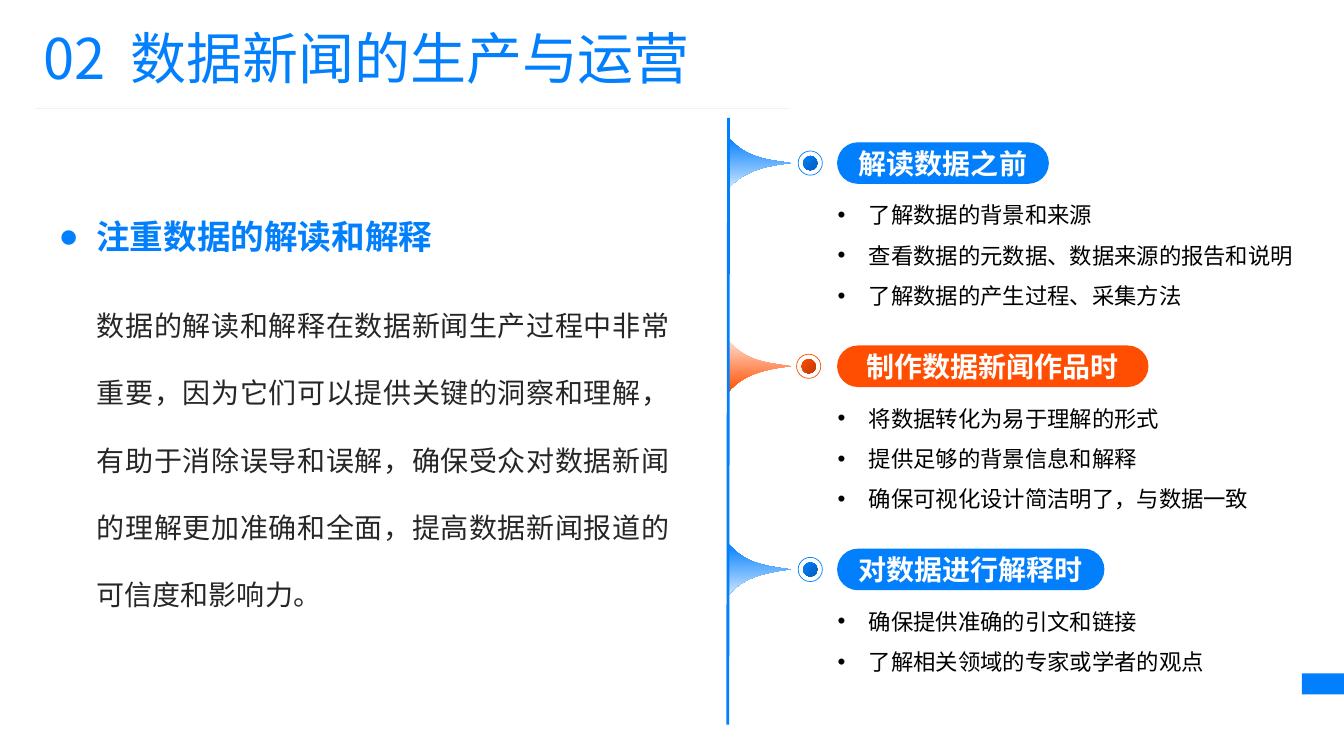
from dataclasses import dataclass

from lxml.etree import SubElement
from pptx import Presentation
from pptx.dml.color import RGBColor
from pptx.enum.shapes import MSO_CONNECTOR, MSO_SHAPE
from pptx.enum.text import MSO_ANCHOR, MSO_AUTO_SIZE, PP_ALIGN
from pptx.oxml.ns import qn
from pptx.util import Cm, Pt

FONT = "Noto Sans CJK SC"
BLUE = RGBColor(0x02, 0x7F, 0xFD)
DARK_BLUE = RGBColor(0x01, 0x5F, 0xBE)
PALE_BLUE = RGBColor(0xCC, 0xE5, 0xFF)
ORANGE = RGBColor(0xFF, 0x4E, 0x01)
DARK_ORANGE = RGBColor(0xC0, 0x3A, 0x00)
PALE_ORANGE = RGBColor(0xFF, 0xDC, 0xCC)
WHITE = RGBColor(0xFF, 0xFF, 0xFF)
BLACK = RGBColor(0, 0, 0)
INK = RGBColor(0x26, 0x26, 0x26)
RULE = RGBColor(0xF2, 0xF2, 0xF2)

AXIS_X = 18.36
LIST_X = 21.11
FIRST_Y = 4.11
PITCH = 5.12
UPPER_CURVE = [(0, -0.65), (0.43, -0.15), (0.86, -0.1), (1.57, 0)]
LOWER_CURVE = [(1.57, 0), (0.84, 0.08), (0.36, 0.23), (0, 0.64)]
STEPS = 16


@dataclass
class Section:
    title: str
    pill_width: float
    list_width: float
    dot_x: float
    color: RGBColor
    dark: RGBColor
    spike: tuple[RGBColor, RGBColor]
    points: list[str]


SECTIONS = [
    Section("解读数据之前", 5.31, 11.68, 20.42, BLUE, DARK_BLUE, (BLUE, PALE_BLUE),
            ["了解数据的背景和来源", "查看数据的元数据、数据来源的报告和说明",
             "了解数据的产生过程、采集方法"]),
    Section("制作数据新闻作品时", 7.82, 11.02, 20.38, ORANGE, DARK_ORANGE, (PALE_ORANGE, ORANGE),
            ["将数据转化为易于理解的形式", "提供足够的背景信息和解释",
             "确保可视化设计简洁明了，与数据一致"]),
    Section("对数据进行解释时", 6.71, 11.02, 20.42, BLUE, DARK_BLUE, (BLUE, PALE_BLUE),
            ["确保提供准确的引文和链接", "了解相关领域的专家或学者的观点"]),
]


def write_text(tf, paragraphs, *, size, color, bold=False, align=PP_ALIGN.LEFT,
               anchor=MSO_ANCHOR.TOP, spacing=1.0, bullet=None, indent=0.0, inset=(0, 0)):
    tf.word_wrap = True
    tf.auto_size = MSO_AUTO_SIZE.NONE
    tf.vertical_anchor = anchor
    tf.margin_left = tf.margin_right = Cm(inset[0])
    tf.margin_top = tf.margin_bottom = Cm(inset[1])
    for i, runs in enumerate(paragraphs):
        p = tf.add_paragraph() if i else tf.paragraphs[0]
        p.alignment = align
        p.line_spacing = spacing
        if bullet:
            pPr = p._p.get_or_add_pPr()
            pPr.set("marL", str(Cm(indent)))
            pPr.set("indent", str(-Cm(indent)))
            SubElement(pPr, qn("a:buFont")).set("typeface", "Arial")
            SubElement(pPr, qn("a:buChar")).set("char", bullet)
        for text in [runs] if isinstance(runs, str) else runs:
            r = p.add_run()
            r.text = text
            r.font.size = Pt(size)
            r.font.bold = bold
            r.font.color.rgb = color
            r.font.name = FONT
            SubElement(r._r.get_or_add_rPr(), qn("a:ea")).set("typeface", FONT)


def add_text(s, x: float, y: float, w: float, h: float, paragraphs, **style):
    tb = s.shapes.add_textbox(Cm(x), Cm(y), Cm(w), Cm(h))
    write_text(tb.text_frame, paragraphs, **style)


def add_line(s, x1: float, y1: float, x2: float, y2: float, color: RGBColor, width: float):
    line = s.shapes.add_connector(MSO_CONNECTOR.STRAIGHT, Cm(x1), Cm(y1), Cm(x2), Cm(y2))
    line.line.color.rgb = color
    line.line.width = Pt(width)
    SubElement(line._element.spPr, qn("a:effectLst"))


def paint(sp, fill=None, line=None, width: float = 0.5, angle: float = 270):
    sp.shadow.inherit = False
    if fill is None:
        sp.fill.background()
    elif isinstance(fill, RGBColor):
        sp.fill.solid()
        sp.fill.fore_color.rgb = fill
    else:
        sp.fill.gradient()
        sp.fill.gradient_angle = angle
        for stop, color in zip(sp.fill.gradient_stops, fill):
            stop.color.rgb = color
    if line is None:
        sp.line.fill.background()
    else:
        sp.line.color.rgb = line
        sp.line.width = Pt(width)


def add_shape(s, kind, x: float, y: float, w: float, h: float, **look):
    sp = s.shapes.add_shape(kind, Cm(x), Cm(y), Cm(w), Cm(h))
    paint(sp, **look)
    return sp


def add_circle(s, x: float, y: float, d: float, **look):
    add_shape(s, MSO_SHAPE.OVAL, x - d / 2, y - d / 2, d, d, **look)


def curve_points(controls, y: float):
    points = []
    for i in range(STEPS + 1):
        t = i / STEPS
        weights = ((1 - t) ** 3, 3 * t * (1 - t) ** 2, 3 * t * t * (1 - t), t ** 3)
        dx = sum(w * c[0] for w, c in zip(weights, controls))
        dy = sum(w * c[1] for w, c in zip(weights, controls))
        points.append((Cm(AXIS_X + dx), Cm(y + dy)))
    return points


def add_spike(s, y: float, colors):
    points = curve_points(UPPER_CURVE, y) + curve_points(LOWER_CURVE, y)[1:]
    builder = s.shapes.build_freeform(*points[0])
    builder.add_line_segments(points[1:], close=True)
    paint(builder.convert_to_shape(), fill=colors)


def add_section(s, section: Section, y: float):
    add_spike(s, y, section.spike)
    add_circle(s, section.dot_x, y, 0.36, fill=(section.color, section.dark), angle=315)
    add_circle(s, section.dot_x, y, 0.61, line=section.color)
    pill = add_shape(s, MSO_SHAPE.ROUNDED_RECTANGLE, LIST_X, y - 0.51, section.pill_width, 1.02,
                     fill=section.color, line=section.color, width=0.75)
    pill.adjustments[0] = 0.5
    write_text(pill.text_frame, [section.title], size=20, color=WHITE, bold=True,
               align=PP_ALIGN.CENTER, anchor=MSO_ANCHOR.MIDDLE)
    add_text(s, LIST_X, y + 0.63, section.list_width, 1.03 * len(section.points), section.points,
             size=16, color=BLACK, spacing=1.5, bullet="•", indent=0.79)


def main():
    prs = Presentation()
    prs.slide_width, prs.slide_height = Cm(33.87), Cm(19.05)
    s = prs.slides.add_slide(prs.slide_layouts[5])

    title = s.shapes.title
    title.left, title.top, title.width, title.height = Cm(0.84), Cm(0.66), Cm(19.5), Cm(1.96)
    write_text(title.text_frame, [["02", " ", "数据新闻的生产与运营"]], size=40, color=BLUE,
               spacing=0.9, inset=(0.25, 0.13))
    gap = title.text_frame.paragraphs[0].runs[1]
    gap._r.get_or_add_rPr().set("spc", "900")
    add_line(s, 0.89, 2.74, 19.89, 2.74, RULE, 0.5)
    add_shape(s, MSO_SHAPE.RECTANGLE, 32.81, 16.97, 1.06, 0.53, fill=BLUE)

    add_text(s, 0.38, 5.33, 11.61, 1.12, ["注重数据的解读和解释"], size=24, color=BLUE, bold=True,
             align=PP_ALIGN.CENTER, anchor=MSO_ANCHOR.BOTTOM, bullet="●", indent=0.95)
    add_text(s, 2.44, 6.93, 14.43, 8.76,
             ["数据的解读和解释在数据新闻生产过程中非常重要，因为它们可以提供关键的洞察和理解，"
              "有助于消除误导和误解，确保受众对数据新闻的理解更加准确和全面，"
              "提高数据新闻报道的可信度和影响力。"],
             size=20, color=INK, align=PP_ALIGN.JUSTIFY, spacing=2.0)

    for i, section in enumerate(SECTIONS):
        add_section(s, section, FIRST_Y + i * PITCH)
    add_line(s, AXIS_X, 2.97, AXIS_X - 0.02, 18.26, BLUE, 2)

    prs.save("out.pptx")


if __name__ == "__main__":
    main()
